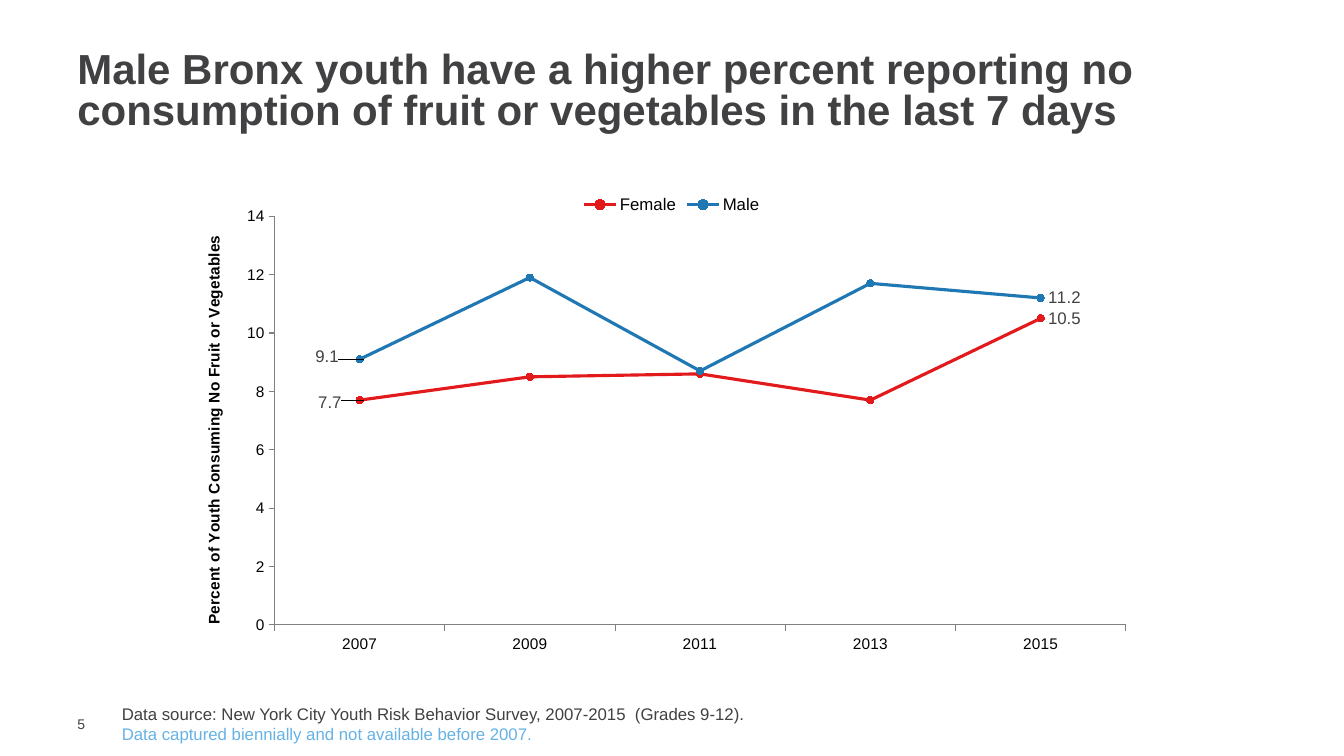
from lxml import etree
from pptx import Presentation
from pptx.chart.data import CategoryChartData
from pptx.dml.color import RGBColor
from pptx.enum.chart import (XL_CHART_TYPE, XL_LABEL_POSITION, XL_LEGEND_POSITION,
                             XL_MARKER_STYLE, XL_TICK_MARK)
from pptx.enum.text import MSO_ANCHOR
from pptx.oxml import parse_xml
from pptx.oxml.ns import nsdecls, qn
from pptx.util import Cm, Pt

LINE_MARKERS = XL_CHART_TYPE.LINE_MARKERS
LABEL_RIGHT = XL_LABEL_POSITION.RIGHT
LEGEND_TOP = XL_LEGEND_POSITION.TOP
CIRCLE = XL_MARKER_STYLE.CIRCLE
TICK_OUT, TICK_NONE = XL_TICK_MARK.OUTSIDE, XL_TICK_MARK.NONE
MIDDLE, TOP = MSO_ANCHOR.MIDDLE, MSO_ANCHOR.TOP

FONT = "Arial"
COLORS = {"text": "414042", "note": "66B2E5", "black": "000000", "axis": "808080",
          "Female": "E31A1C", "Male": "1F78B4"}
YEARS = ["2007", "2009", "2011", "2013", "2015"]
PERCENTS = {"Female": [7.7, 8.5, 8.6, 7.7, 10.5],
            "Male": [9.1, 11.9, 8.7, 11.7, 11.2]}
# Shift of each 2007 label, as a share of the chart's width and height
FIRST_LABEL_SHIFT = {"Female": (-0.05, 0.005), "Male": (-0.053, -0.005)}
LEADER_LINES = (
    f'<c:extLst {nsdecls("c")}><c:ext uri="{{CE6537A1-D6FC-4f65-9D91-7224C49458BB}}" '
    'xmlns:c15="http://schemas.microsoft.com/office/drawing/2012/chart">'
    '<c15:showLeaderLines val="1"/></c:ext></c:extLst>')


def color(name):
    return RGBColor.from_string(COLORS[name])


def style_font(font, size, color_name, bold=False):
    font.name, font.size, font.bold = FONT, Pt(size), bold
    font.color.rgb = color(color_name)


def add_text(page, place, lines, size, bold=False, anchor=TOP, spacing=None):
    """Add a text box; lines holds pairs of text and colour name."""
    box = page.shapes.add_textbox(*(Cm(length) for length in place))
    frame = box.text_frame
    frame.word_wrap = True
    frame.vertical_anchor = anchor
    frame.text = "\n".join(text for text, _ in lines)
    for para, (_, color_name) in zip(frame.paragraphs, lines):
        if spacing:
            para.line_spacing = spacing
        for span in para.runs:
            style_font(span.font, size, color_name, bold)
    return box


def manual_layout(**values):
    layout = parse_xml(f'<c:layout {nsdecls("c")}><c:manualLayout/></c:layout>')
    for tag, value in values.items():
        etree.SubElement(layout[0], qn(f"c:{tag}")).set("val", str(value))
    return layout


def place_plot(chart):
    plot_area = chart._chartSpace.chart.plotArea
    for layout in plot_area.findall(qn("c:layout")):
        plot_area.remove(layout)
    plot_area.insert(0, manual_layout(layoutTarget="inner", xMode="edge", yMode="edge",
                                      x=0.094, y=0.063, w=0.87, h=0.811))


def style_axis(axis):
    axis.has_major_gridlines = False
    axis.major_tick_mark, axis.minor_tick_mark = TICK_OUT, TICK_NONE
    axis.format.line.color.rgb = color("axis")
    axis.format.line.width = Pt(0.75)
    style_font(axis.tick_labels.font, 11, "black")


def style_series(series):
    series.smooth = False
    series.format.line.color.rgb = color(series.name)
    series.format.line.width = Pt(2.25)
    marker = series.marker
    marker.style, marker.size = CIRCLE, 5
    for part in (marker.format.fill, marker.format.line.fill):
        part.solid()
        part.fore_color.rgb = color(series.name)


def label_ends(series):
    """Show the first and last values, the first moved left with a leader line."""
    series.data_labels.show_value = False
    for index in (0, len(YEARS) - 1):
        label = series.points[index].data_label
        style_font(label.font, 12, "text")
        label.position = LABEL_RIGHT
    labels = series._element.find(qn("c:dLbls"))
    shift_x, shift_y = FIRST_LABEL_SHIFT[series.name]
    labels.find(qn("c:dLbl")).insert(1, manual_layout(x=shift_x, y=shift_y))
    for old in labels.findall(qn("c:showLeaderLines")):
        labels.remove(old)
    labels.append(parse_xml(LEADER_LINES))


def add_line_chart(page, place):
    data = CategoryChartData()
    data.categories = YEARS
    for name, values in PERCENTS.items():
        data.add_series(name, values)
    chart = page.shapes.add_chart(LINE_MARKERS, *(Cm(length) for length in place), data).chart
    style_font(chart.font, 10, "text")
    chart.has_title = False
    chart.has_legend = True
    chart.legend.position = LEGEND_TOP
    chart.legend.include_in_layout = False
    style_font(chart.legend.font, 12, "black")
    place_plot(chart)

    for axis in (chart.category_axis, chart.value_axis):
        style_axis(axis)
    value_axis = chart.value_axis
    value_axis.minimum_scale, value_axis.maximum_scale, value_axis.major_unit = 0, 14, 2
    frame = value_axis.axis_title.text_frame
    frame.text = "Percent of Youth Consuming No Fruit or Vegetables"
    style_font(frame.paragraphs[0].runs[0].font, 11, "black", bold=True)
    body = frame._txBody.find(qn("a:bodyPr"))
    body.set("rot", "-5400000")
    body.set("vert", "horz")

    chart.plots[0].vary_by_categories = False
    for series in chart.plots[0].series:
        style_series(series)
        label_ends(series)


def main():
    deck = Presentation()
    deck.slide_width, deck.slide_height = Cm(33.87), Cm(19.05)
    page = deck.slides.add_slide(deck.slide_layouts[6])

    number = add_text(page, (1.7, 18.03, 1.09, 0.43), [("5", "text")], 10, anchor=MIDDLE)
    frame = number.text_frame
    frame.margin_top = frame.margin_bottom = frame.margin_right = 0
    add_text(page, (1.7, 1.19, 30.48, 2.31),
             [("Male Bronx youth have a higher percent reporting no consumption of "
               "fruit or vegetables in the last 7 days", "text")],
             30, bold=True, anchor=MIDDLE, spacing=0.8)
    add_line_chart(page, (4.6, 4.65, 24.66, 12.7))
    add_text(page, (2.82, 17.6, 24.66, 1.27),
             [("Data source: New York City Youth Risk Behavior Survey, 2007-2015  (Grades 9-12).",
               "text"),
              ("Data captured biennially and not available before 2007.", "note")], 12)
    deck.save("out.pptx")


if __name__ == "__main__":
    main()
